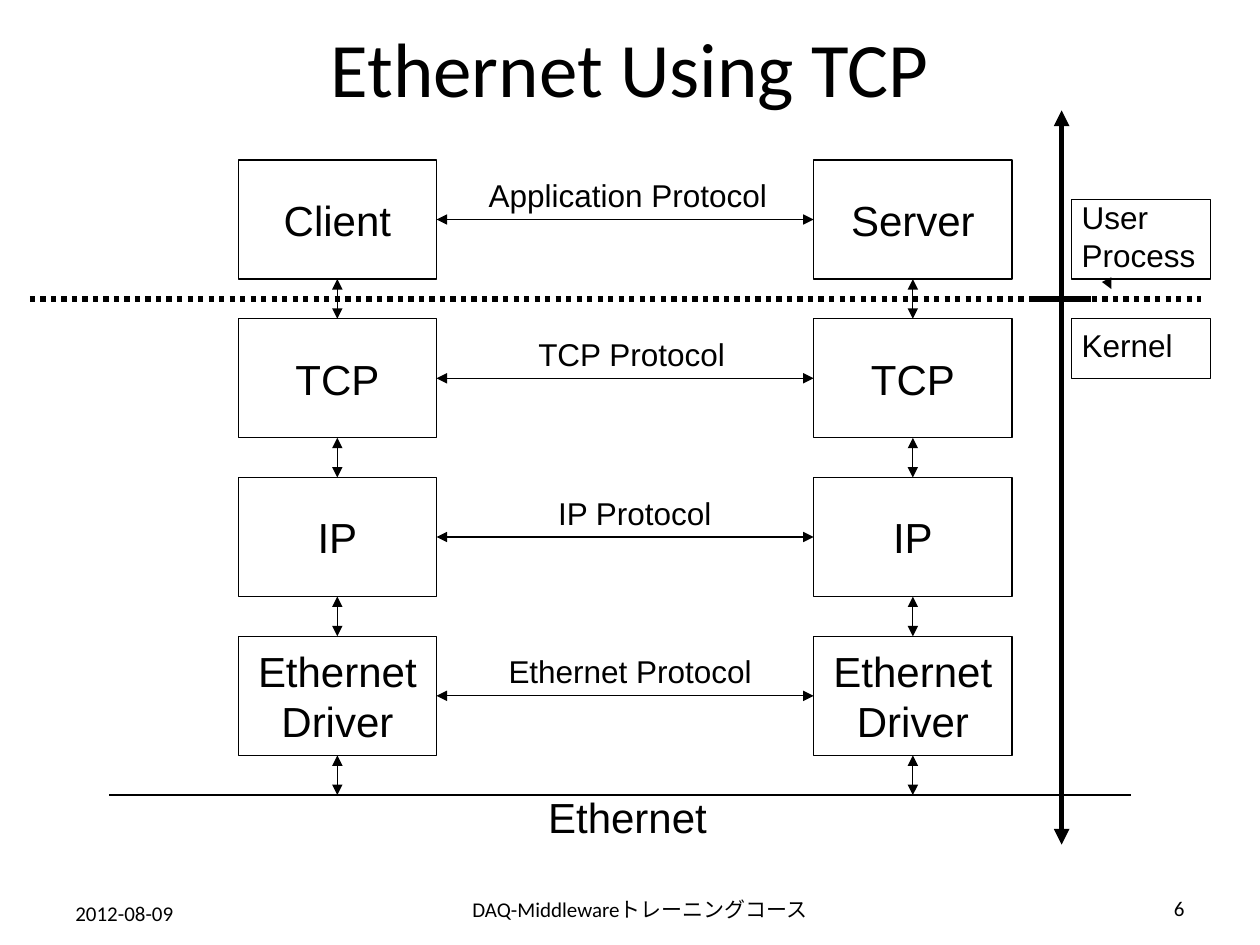
from pptx import Presentation
from pptx import util as u
from pptx.dml.color import RGBColor
from pptx.enum import dml, shapes, text
from pptx.oxml.ns import qn
from lxml import etree

W, H = 10, 7.5
UNIT, TOP = 0.1575, 0.01
BLACK = "000000"
LEFT, CENTER, RIGHT = text.PP_ALIGN.LEFT, text.PP_ALIGN.CENTER, text.PP_ALIGN.RIGHT
MIDDLE = text.MSO_ANCHOR.MIDDLE
BOTH = ("headEnd", "tailEnd")
LAYERS = ["TCP", "IP", "Ethernet\nDriver"]
PROTOCOLS = [("Application Protocol", 2, 16), ("TCP Protocol", 4.5, 11.5),
             ("IP Protocol", 5.5, 9.5), ("Ethernet Protocol", 3, 14.5)]


def color(value):
    return RGBColor.from_string(value)


def cx(col):
    return u.Inches(col * UNIT)


def cy(row):
    return u.Inches(TOP + row * UNIT)


def share(x, y, w, h):
    return u.Inches(x * W), u.Inches(y * H), u.Inches(w * W), u.Inches(h * H)


def put(obj, values):
    for name, value in values.items():
        setattr(obj, name, value)


def write(sp, words, size, font="Arial", align=LEFT, **frame):
    tf = sp.text_frame
    tf.text = words
    put(tf, frame)
    for p in tf.paragraphs:
        p.alignment = align
        for r in p.runs:
            put(r.font, {"name": font, "size": u.Pt(size)})
            r.font.color.rgb = color(BLACK)


def label(s, box, words, size, font="Arial", align=LEFT, wrap=False):
    write(s.shapes.add_textbox(*box), words, size, font, align, word_wrap=wrap)


def block(s, col, row, cols, rows, words, size, align=CENTER, **frame):
    sp = s.shapes.add_shape(shapes.MSO_SHAPE.RECTANGLE, cx(col), cy(row), cx(cols), cx(rows))
    sp.shadow.inherit = False
    sp.fill.background()
    sp.line.color.rgb = color(BLACK)
    sp.line.width = u.Pt(0.75)
    write(sp, words, size, align=align, vertical_anchor=MIDDLE, word_wrap=False, **frame)
    return sp


def wire(s, start, end, width=0.75, ends=(), dash=None):
    c = s.shapes.add_connector(shapes.MSO_CONNECTOR.STRAIGHT,
                               cx(start[0]), cy(start[1]), cx(end[0]), cy(end[1]))
    c.line.color.rgb = color(BLACK)
    put(c.line, {"width": u.Pt(width), "dash_style": dash})
    pr = c._element.spPr
    for tag in ends:
        etree.SubElement(pr.find(qn("a:ln")), qn("a:" + tag), type="triangle")
    etree.SubElement(pr, qn("a:effectLst"))
    return c


def stack(s, col, row, cols, rows, pitch, names):
    blocks = [block(s, col, row + i * pitch, cols, rows, name, 24)
              for i, name in enumerate(names)]
    mid = col + cols / 2
    for i, upper in enumerate(blocks):
        y = row + i * pitch
        c = wire(s, (mid, y + rows), (mid, y + pitch), ends=BOTH)
        c.begin_connect(upper, 2)
        if i + 1 < len(blocks):
            c.end_connect(blocks[i + 1], 0)
    return blocks


def protocols(s, col, row, cols, pitch, lefts, rights):
    for i, (a, b, (words, shift, width)) in enumerate(zip(lefts, rights, PROTOCOLS)):
        y = row + i * pitch
        c = wire(s, (col, y), (col + cols, y), ends=BOTH)
        c.begin_connect(a, 3)
        c.end_connect(b, 1)
        label(s, (cx(col + shift), cy(y - 2.5), cx(width), cx(2.5)), words, 18)


def cable(s, col, row, cols):
    wire(s, (col, row), (col + cols, row))
    label(s, (cx(col + 21.5), cy(row - 0.5), cx(9.5), cx(3.2)), "Ethernet", 24)


def spaces(s, col, row, top, bottom):
    wire(s, (1.5, row), (60.5, row), 3, dash=dml.MSO_LINE.ROUND_DOT)
    wire(s, (col + 2.4, row - 0.7), (col + 2.5, row - 0.5), ends=("tailEnd",))
    for y in (top, bottom):
        wire(s, (col, row), (col, y), 3, ("tailEnd",))
    wire(s, (col - 1.5, row), (col + 1.5, row), 3)
    for words, y, rows in (("User\nProcess", row - 5, 4), ("Kernel", row + 1, 3)):
        block(s, col + 0.5, y, 7, rows, words, 18, LEFT,
              margin_left=u.Inches(0.08), margin_bottom=u.Inches(0.1))


def heading(s, box):
    sp = s.shapes.title
    put(sp, dict(zip(("left", "top", "width", "height"), box)))
    write(sp, "Ethernet Using TCP", 44, "Calibri", CENTER, vertical_anchor=MIDDLE)


def footer(s, y):
    for words, x, w, dy, align in (
            ("2012-08-09", 0.05, 0.23, 0.005, LEFT),
            ("DAQ-Middlewareトレーニングコース", 0.342, 0.332, 0.001, CENTER),
            ("6", 0.717, 0.233, 0, RIGHT)):
        label(s, share(x, y + dy, w, 0.04), words, 12, "Calibri", align, True)


def main():
    prs = Presentation()
    prs.slide_width, prs.slide_height = u.Inches(W), u.Inches(H)
    s = prs.slides.add_slide(prs.slide_layouts[5])
    heading(s, share(0.05, -0.013, 0.9, 0.167))
    cable(s, 5.5, 40, 51.5)
    clients = stack(s, 12, 8, 10, 6, 8, ["Client"] + LAYERS)
    servers = stack(s, 41, 8, 10, 6, 8, ["Server"] + LAYERS)
    protocols(s, 22, 11, 19, 8, clients, servers)
    spaces(s, 53.5, 15, 5.5, 42.5)
    footer(s, 0.941)
    prs.save("out.pptx")


if __name__ == "__main__":
    main()
